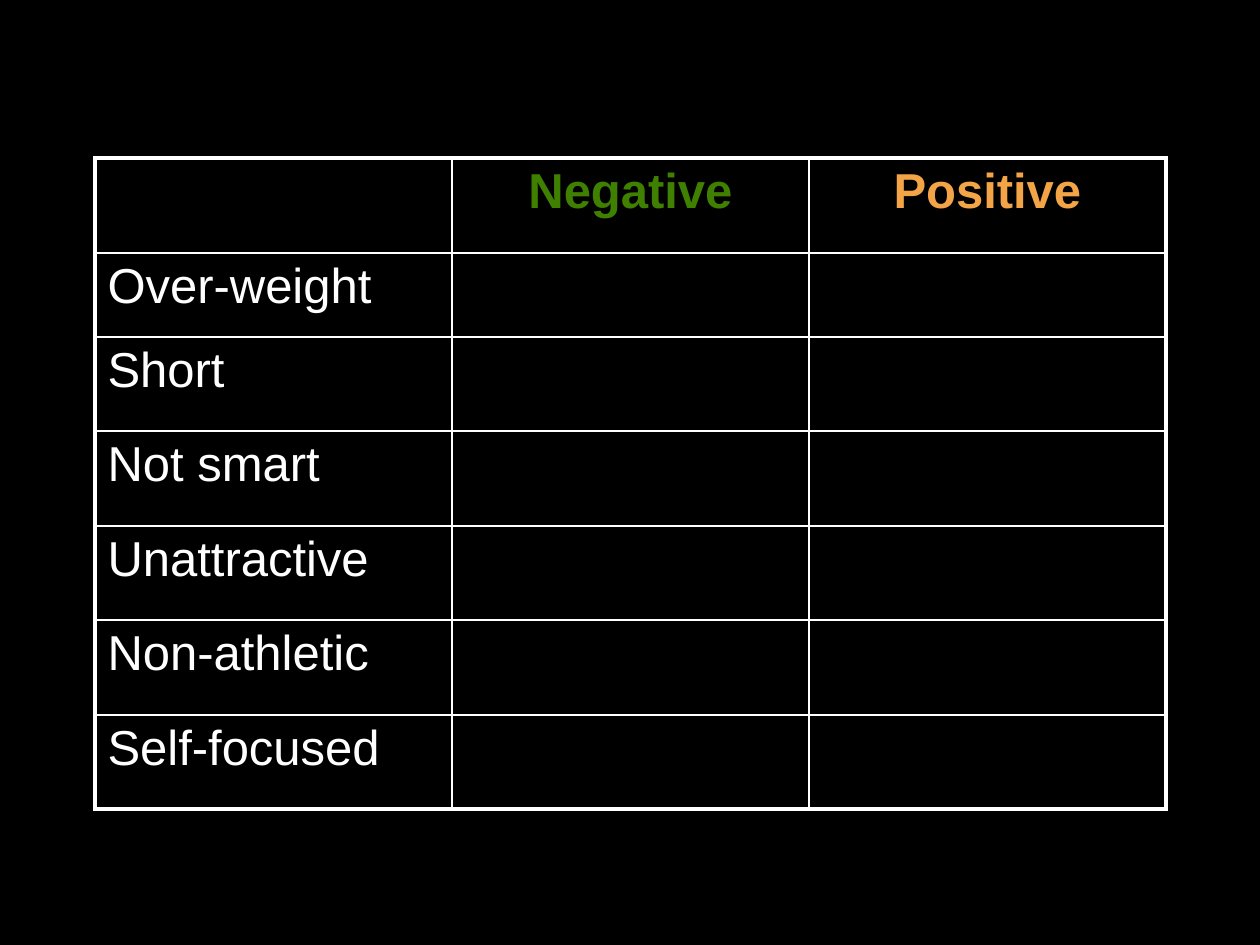
import pptx
import pptx.dml.color
import pptx.enum.text
import pptx.oxml.ns
import pptx.util
from lxml import etree

# Content
HEADINGS = [("Negative", "408000"), ("Positive", "F3A447")]
TRAITS = ["Over-weight", "Short", "Not smart", "Unattractive", "Non-athletic", "Self-focused"]

# Layout in px, 126 to the inch
PX = 914400 // 126
SLIDE_WIDTH, SLIDE_HEIGHT = 1260, 945
LEFT, TOP = 95, 158
COLUMN_WIDTH = 357
ROW_HEIGHTS = [95, 84, 94, 95, 94, 95, 94]
COLUMN_COUNT = len(HEADINGS) + 1
ROW_COUNT = len(TRAITS) + 1

BLACK, WHITE = "000000", "FFFFFF"
OUTER_LINE, INNER_LINE = 2.25, 1


def px(length):
    return pptx.util.Emu(length * PX)


def color(value):
    return pptx.dml.color.RGBColor.from_string(value)


def write_text(cell, text, hue=WHITE, bold=False, centered=False):
    paragraph = cell.text_frame.paragraphs[0]
    alignments = pptx.enum.text.PP_ALIGN
    paragraph.alignment = alignments.CENTER if centered else alignments.LEFT
    run = paragraph.add_run()
    run.text = text
    run.font.name = "Arial"
    run.font.size = pptx.util.Pt(28)
    run.font.bold = bold
    run.font.color.rgb = color(hue)


def add_border(cell, side, width):
    qn = pptx.oxml.ns.qn
    properties = cell._tc.get_or_add_tcPr()
    line = etree.SubElement(properties, qn(f"a:ln{side}"), w=str(pptx.util.Pt(width)))
    fill = etree.SubElement(line, qn("a:solidFill"))
    etree.SubElement(fill, qn("a:srgbClr"), val=WHITE)


presentation = pptx.Presentation()
presentation.slide_width = px(SLIDE_WIDTH)
presentation.slide_height = px(SLIDE_HEIGHT)
slide = presentation.slides.add_slide(presentation.slide_layouts[6])
slide.background.fill.solid()
slide.background.fill.fore_color.rgb = color(BLACK)

# Table grid
table = slide.shapes.add_table(
    ROW_COUNT, COLUMN_COUNT, px(LEFT), px(TOP),
    px(COLUMN_WIDTH * COLUMN_COUNT), px(sum(ROW_HEIGHTS))).table
table.first_row = False
table.horz_banding = False
for column in table.columns:
    column.width = px(COLUMN_WIDTH)
for row, height in zip(table.rows, ROW_HEIGHTS):
    row.height = px(height)

# Heavy frame, thin inner lines, no cell fill
for row in range(ROW_COUNT):
    for column in range(COLUMN_COUNT):
        cell = table.cell(row, column)
        on_frame = {"L": column == 0, "R": column == COLUMN_COUNT - 1,
                    "T": row == 0, "B": row == ROW_COUNT - 1}
        for side, outer in on_frame.items():
            add_border(cell, side, OUTER_LINE if outer else INNER_LINE)
        cell.fill.background()

# Headings and row labels
for column, (heading, hue) in enumerate(HEADINGS, start=1):
    write_text(table.cell(0, column), heading, hue=hue, bold=True, centered=True)
for row, trait in enumerate(TRAITS, start=1):
    write_text(table.cell(row, 0), trait)

presentation.save("out.pptx")
